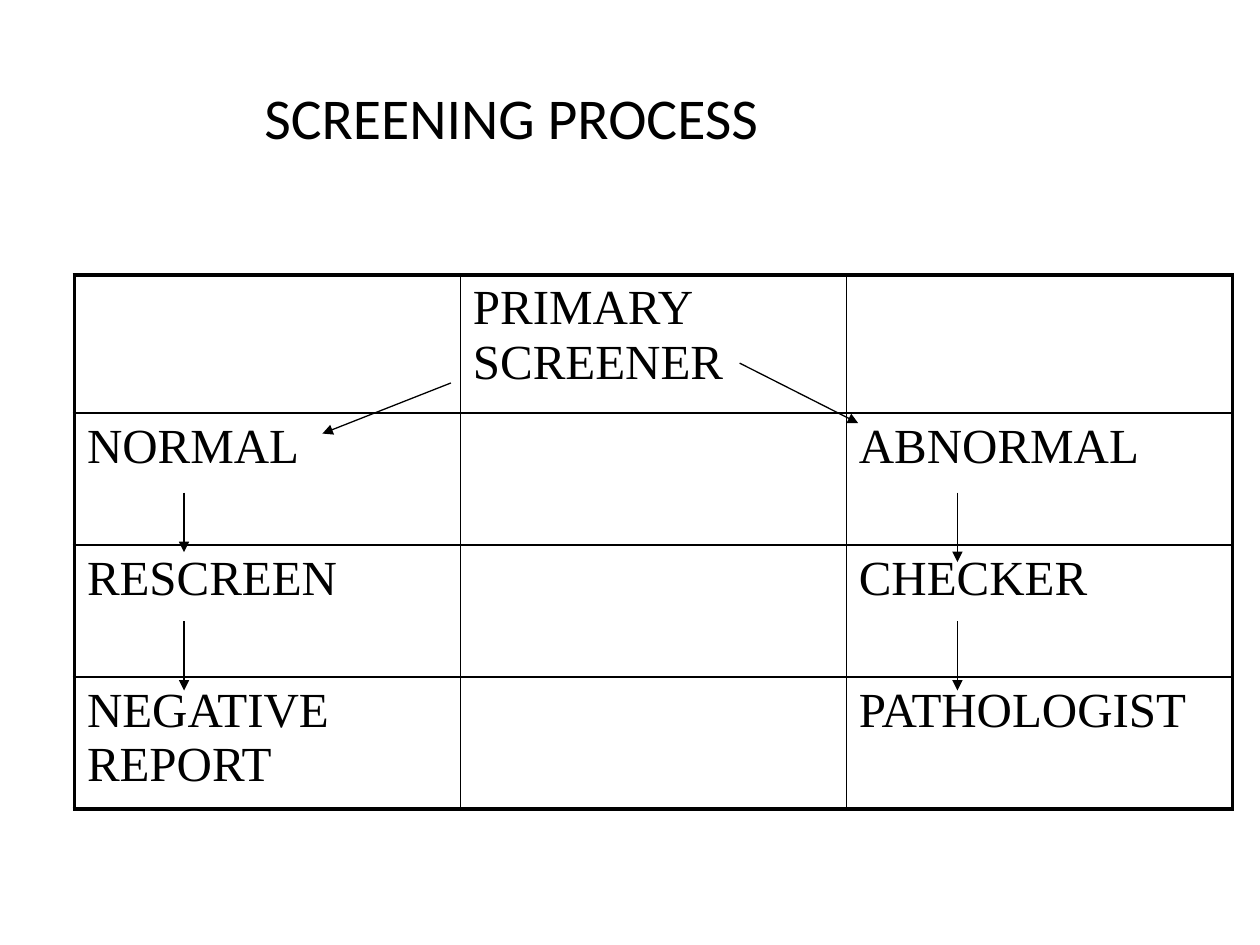
"""Build a slide showing the screening process as a table with arrows."""
from lxml import etree
from pptx import Presentation
from pptx.dml.color import RGBColor
from pptx.enum.shapes import MSO_CONNECTOR
from pptx.enum.text import MSO_ANCHOR, PP_ALIGN
from pptx.oxml.ns import qn
from pptx.util import Cm, Pt

STRAIGHT = MSO_CONNECTOR.STRAIGHT
MIDDLE = MSO_ANCHOR.MIDDLE
LEFT = PP_ALIGN.LEFT
BLACK = RGBColor(0, 0, 0)
THICK, THIN = Pt(2.25), Pt(1)

STEPS = [
    ["", "PRIMARY SCREENER", ""],
    ["NORMAL", "", "ABNORMAL"],
    ["RESCREEN", "", "CHECKER"],
    ["NEGATIVE REPORT", "", "PATHOLOGIST"],
]
ARROWS = [
    (9.09, 7.72, 6.5, 8.74),
    (14.91, 7.32, 17.3, 8.53),
    (3.71, 9.93, 3.71, 11.13),
    (3.71, 12.52, 3.71, 13.92),
    (19.3, 9.93, 19.3, 11.33),
    (19.3, 12.52, 19.3, 13.92),
]


def set_font(para, name, size):
    for run in para.runs:
        run.font.name = name
        run.font.size = Pt(size)
        run.font.color.rgb = BLACK


def add_title(slide, text):
    box = slide.shapes.add_textbox(Cm(5.08), Cm(0.84), Cm(20.32), Cm(3.18))
    frame = box.text_frame
    frame.word_wrap = True
    frame.vertical_anchor = MIDDLE
    frame.text = text
    para = frame.paragraphs[0]
    para.alignment = LEFT
    para.line_spacing = 0.9
    set_font(para, "Calibri", 33)


def set_border(cell, widths):
    props = cell._tc.get_or_add_tcPr()
    for pos, (side, width) in enumerate(zip("LRTB", widths)):
        line = etree.Element(qn(f"a:ln{side}"), w=str(width))
        fill = etree.SubElement(line, qn("a:solidFill"))
        etree.SubElement(fill, qn("a:srgbClr"), val=str(BLACK))
        props.insert(pos, line)


def add_grid(slide, rows):
    count, width = len(rows), len(rows[0])
    frame = slide.shapes.add_table(
        count, width, Cm(1.5), Cm(5.54), Cm(23.34), Cm(10.77))
    table = frame.table
    table.first_row = table.horz_banding = False
    for col in table.columns:
        col.width = Cm(7.78)
    for r, texts in enumerate(rows):
        table.rows[r].height = Cm(2.66 if r else 2.79)
        for c, text in enumerate(texts):
            cell = table.cell(r, c)
            cell.fill.background()
            edges = (c == 0, c == width - 1, r == 0, r == count - 1)
            set_border(cell, [THICK if edge else THIN for edge in edges])
            if text:
                cell.text_frame.text = text
                set_font(cell.text_frame.paragraphs[0], "Times New Roman", 28)


def add_arrow(slide, ends):
    arrow = slide.shapes.add_connector(STRAIGHT, *map(Cm, ends))
    arrow.line.color.rgb = BLACK
    arrow.line.width = Pt(0.75)
    line = arrow.line._get_or_add_ln()
    etree.SubElement(line, qn("a:tailEnd"), type="triangle")
    etree.SubElement(arrow._element.spPr, qn("a:effectLst"))


def main():
    deck = Presentation()
    deck.slide_width, deck.slide_height = Cm(25.4), Cm(19.05)
    slide = deck.slides.add_slide(deck.slide_layouts[6])
    add_title(slide, "SCREENING PROCESS")
    add_grid(slide, STEPS)
    for ends in ARROWS:
        add_arrow(slide, ends)
    deck.save("out.pptx")


if __name__ == "__main__":
    main()
